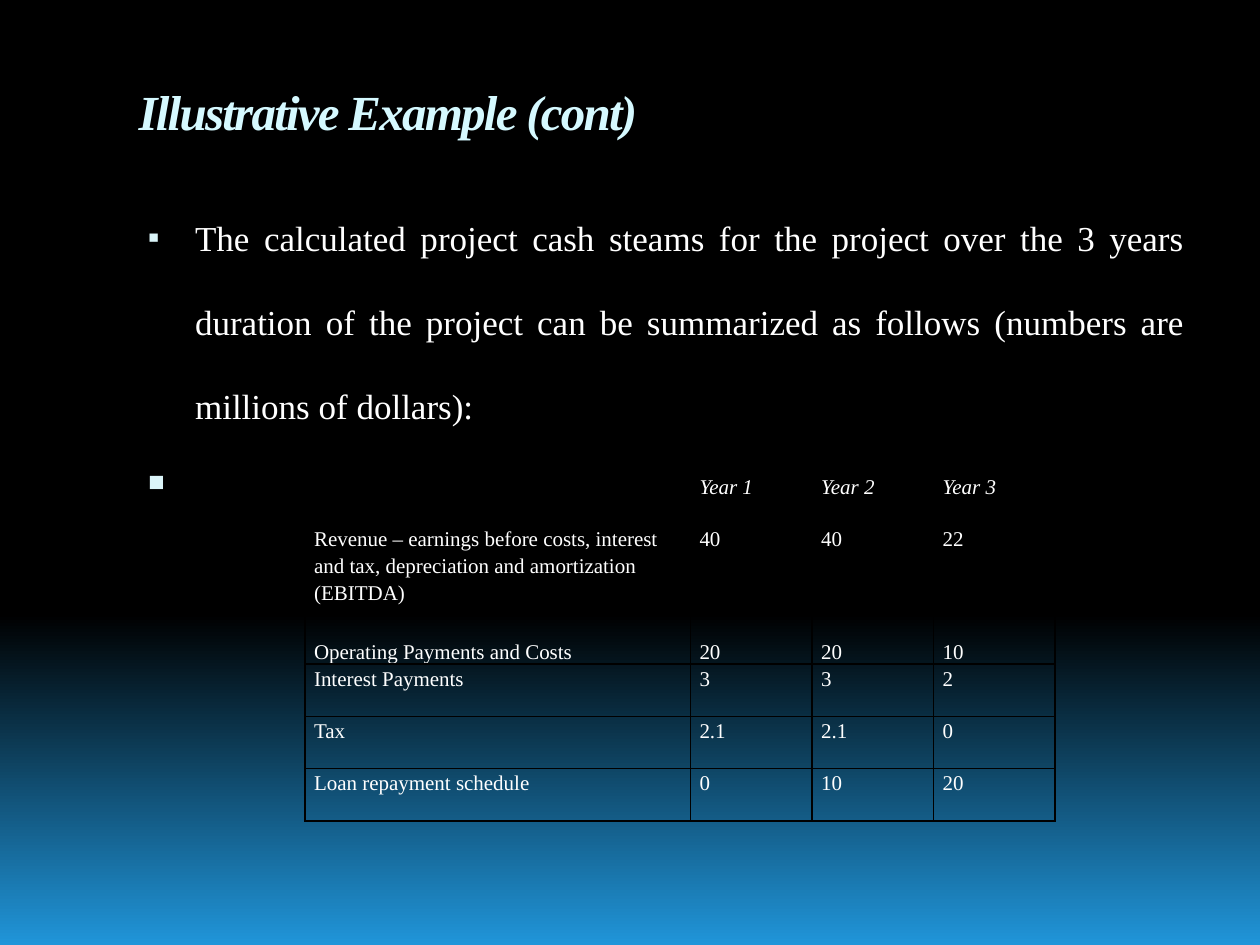
"""Build the project cash stream slide with its table of yearly figures."""
from dataclasses import dataclass

from lxml import etree
from pptx import Presentation
from pptx import util as u
from pptx.dml import color
from pptx.enum import text
from pptx.oxml import ns

FONT = "Times New Roman"
COLORS = {"title": "D5F9FF", "body": "FFFFFF", "bullet": "DBF5F9",
          "black": "000000", "glow": "2095D9"}
COLUMN_WIDTHS = (220.3, 69.5, 69.5, 69.5)


@dataclass
class Bullet:
    content: str
    size: float
    spacing: float | u.Length
    align: text.PP_ALIGN


@dataclass
class Row:
    values: tuple[str, ...]
    height: float = 29.9
    italic: bool = False
    anchor: text.MSO_ANCHOR = text.MSO_ANCHOR.TOP


BULLETS = (
    Bullet("The calculated project cash steams for the project over the 3 years duration "
           "of the project can be summarized as follows (numbers are millions of dollars):",
           20, u.Pt(48), text.PP_ALIGN.JUSTIFY),
    Bullet(" ", 32, 1.15, text.PP_ALIGN.LEFT),
)
ROWS = (
    Row(("", "Year 1", "Year 2", "Year 3"), italic=True),
    Row(("Revenue – earnings before costs, interest and tax, depreciation "
         "and amortization (EBITDA)", "40", "40", "22"), height=46.4),
    Row(("Operating Payments and Costs", "20", "20", "10"), anchor=text.MSO_ANCHOR.BOTTOM),
    Row(("Interest Payments", "3", "3", "2")),
    Row(("Tax", "2.1", "2.1", "0")),
    Row(("Loan repayment schedule", "0", "10", "20")),
)


def rgb(name: str) -> color.RGBColor:
    """Return a named colour."""
    return color.RGBColor.from_string(COLORS[name])


def add_child(parent, tag: str, **attributes: str):
    """Append a DrawingML element."""
    return etree.SubElement(parent, ns.qn(f"a:{tag}"), attributes)


def format_runs(paragraph, size: float, color_name: str = "body",
                bold: bool = False, italic: bool = False) -> None:
    """Apply one font to every run of a paragraph."""
    for run in paragraph.runs:
        run.font.name, run.font.size = FONT, u.Pt(size)
        run.font.bold, run.font.italic = bold, italic
        run.font.color.rgb = rgb(color_name)


def paint_background(slide) -> None:
    """Fade the slide from black to blue at its foot."""
    fill = slide.background.fill
    fill.gradient()
    fill.gradient_angle = 270
    for stop, (position, name) in zip(fill.gradient_stops, ((0.65, "black"), (1, "glow"))):
        stop.position = position
        stop.color.rgb = rgb(name)


def write_title(slide) -> None:
    """Place and format the title."""
    title = slide.shapes.title
    title.left, title.top, title.width, title.height = map(u.Pt, (72, 40.5, 612, 49.5))
    frame = title.text_frame
    frame.text = "Illustrative Example (cont)"
    frame.vertical_anchor = text.MSO_ANCHOR.TOP
    frame.margin_top = u.Pt(6.2)
    paragraph = frame.paragraphs[0]
    paragraph.alignment = text.PP_ALIGN.LEFT
    format_runs(paragraph, 28, "title", bold=True, italic=True)
    paragraph.runs[0].font._element.set("spc", "-100")


def write_bullets(slide, bullets: tuple[Bullet, ...]) -> None:
    """Add the bulleted body text."""
    frame = slide.shapes.add_textbox(*map(u.Pt, (72, 96, 612, 380))).text_frame
    frame.word_wrap = True
    frame.text = "\n".join(bullet.content for bullet in bullets)
    for paragraph, bullet in zip(frame.paragraphs, bullets):
        paragraph.alignment = bullet.align
        paragraph.line_spacing = bullet.spacing
        paragraph.space_before = u.Pt(7)
        format_runs(paragraph, bullet.size)
        properties = paragraph._p.get_or_add_pPr()
        properties.set("marL", str(u.Pt(32.4)))
        properties.set("indent", str(u.Pt(-27)))
        add_child(add_child(properties, "buClr"), "srgbClr", val=COLORS["bullet"])
        add_child(properties, "buSzPct", val="95000")
        add_child(properties, "buFont", typeface=FONT)
        add_child(properties, "buChar", char="▪")


def format_cell(cell, value: str, row: Row) -> None:
    """Write one table cell with black borders and no fill."""
    cell.text = value
    cell.vertical_anchor = row.anchor
    cell.margin_left = cell.margin_right = u.Pt(5.3)
    cell.margin_top = cell.margin_bottom = 0
    paragraph = cell.text_frame.paragraphs[0]
    paragraph.line_spacing = 1.15
    format_runs(paragraph, 12, italic=row.italic)
    properties = cell._tc.get_or_add_tcPr()
    for side in ("lnL", "lnR", "lnT", "lnB"):
        line = add_child(properties, side, w=str(u.Pt(1)))
        add_child(add_child(line, "solidFill"), "srgbClr", val=COLORS["black"])
    cell.fill.background()


def add_cash_table(slide, rows: tuple[Row, ...]) -> None:
    """Add the table of yearly cash figures."""
    table = slide.shapes.add_table(
        len(rows), len(COLUMN_WIDTHS), u.Pt(174.2), u.Pt(270),
        u.Pt(sum(COLUMN_WIDTHS)), u.Pt(sum(row.height for row in rows))).table
    table.first_row = table.horz_banding = False
    for column, width in zip(table.columns, COLUMN_WIDTHS):
        column.width = u.Pt(width)
    for table_row, row in zip(table.rows, rows):
        table_row.height = u.Pt(row.height)
        for cell, value in zip(table_row.cells, row.values):
            format_cell(cell, value, row)


def main() -> None:
    """Build and save the presentation."""
    presentation = Presentation()
    presentation.slide_width, presentation.slide_height = u.Pt(720), u.Pt(540)
    slide = presentation.slides.add_slide(presentation.slide_layouts[5])
    paint_background(slide)
    write_title(slide)
    write_bullets(slide, BULLETS)
    add_cash_table(slide, ROWS)
    presentation.save("out.pptx")


if __name__ == "__main__":
    main()
